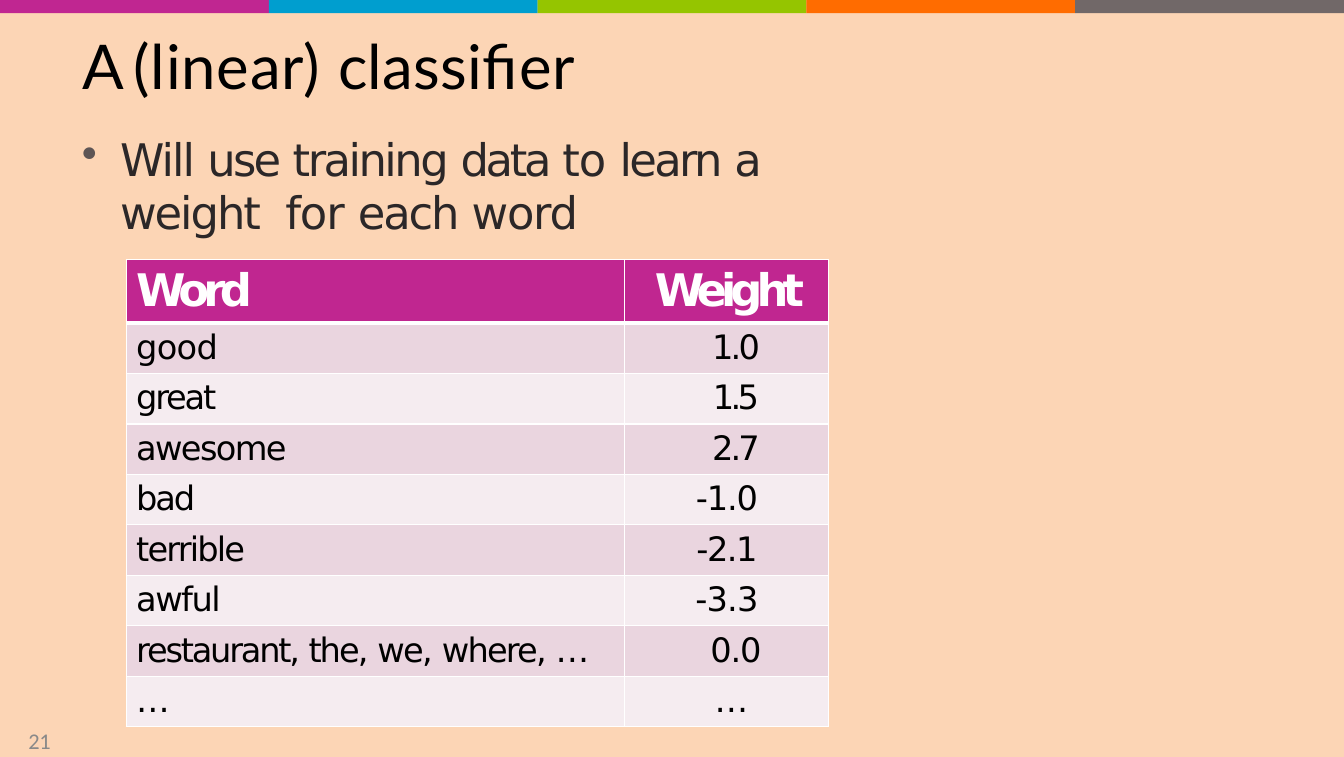
from lxml.etree import SubElement
from pptx import Presentation
from pptx.dml.color import RGBColor
from pptx.enum.shapes import MSO_SHAPE
from pptx.enum.text import PP_ALIGN as Align
from pptx.oxml.ns import qn
from pptx.util import Pt

SLIDE_WIDTH, SLIDE_HEIGHT = 1332, 750
BACKGROUND = "FCD5B5"
BAR_COLORS = ["C02691", "009ECF", "95C500", "FF6C00", "716868"]
BAR_HEIGHT = 13

TITLE = [("A ", -3.3), ("(linear) ", 0.6), ("classifier", 0.2)]
BULLET = [("Will ", -1.4), ("use ", -2), ("training ", -1.8), ("data ", -2.4),
          ("to ", -0.8), ("learn ", -1.9), ("a ", -3), ("weight  ", -1.5),
          ("for ", -0.8), ("each ", -1.6), ("word", -0.9)]
PAGE_NUMBER = [("21", -0.1)]

HEADER = ([("Word", -4.1)], [("Weight", -4.3)], 30, Align.LEFT)
WEIGHTS = [
    ([("good", -0.5)], [("1.0", -2)], 19, Align.CENTER),
    ([("great", -1.6)], [("1.5", -2.6)], 19, Align.CENTER),
    ([("awesome", -1.2)], [("2.7", -2.1)], 19, Align.CENTER),
    ([("bad", -1.5)], [("-1.0", -0.8)], 1, Align.CENTER),
    ([("terrible", -1.3)], [("-2.1", -1.1)], 1, Align.CENTER),
    ([("awful", -1.1)], [("-3.3", -0.6)], 1, Align.CENTER),
    ([("restaurant, ", -1.6), ("the, ", -1.4), ("we, ", -1.2),
      ("where, ", -1.3), ("…", -6.9)], [("0.0", -0.8)], 85, Align.LEFT),
    ([("…", 0)], [("…", 0)], 10, Align.CENTER),
]
WORD_INDENT = 10
TABLE_LEFT, TABLE_TOP = 125, 257
COLUMN_WIDTHS = [494, 202]
HEADER_HEIGHT, ROW_HEIGHT = 63, 50
HEADER_FILL, BAND_FILLS = "C02690", ["EAD5DF", "F5ECF0"]
TABLE_FONT = "DejaVu Sans"


def px(length):
    return round(length * 9144)


def color(value):
    return RGBColor.from_string(value)


def add_runs(paragraph, runs, font, size, text_color, bold=False):
    for text, spacing in runs:
        run = paragraph.add_run()
        run.text = text
        run.font.name = font
        run.font.size = Pt(size)
        run.font.bold = bold
        run.font.color.rgb = color(text_color)
        run.font._element.set("spc", str(round(spacing * 100)))


def add_text(slide, box, inset_left, inset_top, space_before, runs, *style):
    shape = slide.shapes.add_textbox(*map(px, box))
    frame = shape.text_frame
    frame.word_wrap = True
    frame.margin_left, frame.margin_top = px(inset_left), px(inset_top)
    frame.margin_right = frame.margin_bottom = 0
    paragraph = frame.paragraphs[0]
    paragraph.space_before = Pt(space_before)
    add_runs(paragraph, runs, *style)
    return paragraph


def add_bullet(paragraph, bullet_color, indent, hanging):
    properties = paragraph._p.get_or_add_pPr()
    properties.set("marL", str(px(indent)))
    properties.set("indent", str(px(-hanging)))
    SubElement(SubElement(properties, qn("a:buClr")), qn("a:srgbClr"), val=bullet_color)
    SubElement(properties, qn("a:buChar"), char="•")


def add_borders(cell, top, bottom):
    properties = cell._tc.get_or_add_tcPr()
    for side, width in (("L", 1), ("R", 1), ("T", top), ("B", bottom)):
        line = SubElement(properties, qn(f"a:ln{side}"), w=str(Pt(width)))
        SubElement(SubElement(line, qn("a:solidFill")), qn("a:srgbClr"), val="FFFFFF")


def fill_cell(cell, runs, indent, alignment, fill, borders, *style):
    add_borders(cell, *borders)
    cell.fill.solid()
    cell.fill.fore_color.rgb = color(fill)
    cell.margin_left, cell.margin_top = px(indent), px(5)
    cell.margin_right = cell.margin_bottom = 0
    paragraph = cell.text_frame.paragraphs[0]
    paragraph.alignment = alignment
    paragraph.space_before = Pt(3.5)
    add_runs(paragraph, runs, TABLE_FONT, *style)


def add_weight_table(slide):
    rows = [HEADER] + WEIGHTS
    height = HEADER_HEIGHT + ROW_HEIGHT * len(WEIGHTS)
    table = slide.shapes.add_table(
        len(rows), len(COLUMN_WIDTHS), px(TABLE_LEFT), px(TABLE_TOP),
        px(sum(COLUMN_WIDTHS)), px(height)).table
    table.first_row = table.horz_banding = False
    for column, width in zip(table.columns, COLUMN_WIDTHS):
        column.width = px(width)
    for index, (word, weight, weight_indent, alignment) in enumerate(rows):
        is_header = index == 0
        table.rows[index].height = px(HEADER_HEIGHT if is_header else ROW_HEIGHT)
        fill = HEADER_FILL if is_header else BAND_FILLS[(index - 1) % 2]
        borders = (3 if index == 1 else 1, 3 if is_header else 1)
        style = (32, "FFFFFF", True) if is_header else (24, "000000", False)
        fill_cell(table.cell(index, 0), word, WORD_INDENT, Align.LEFT, fill, borders, *style)
        fill_cell(table.cell(index, 1), weight, weight_indent, alignment, fill, borders, *style)


def add_color_bars(slide):
    width = SLIDE_WIDTH / len(BAR_COLORS)
    for index, bar_color in enumerate(BAR_COLORS):
        shape = slide.shapes.add_shape(
            MSO_SHAPE.RECTANGLE, px(index * width), 0, px(width), px(BAR_HEIGHT))
        shape.shadow.inherit = False
        shape.fill.solid()
        shape.fill.fore_color.rgb = color(bar_color)
        shape.line.fill.background()


def main():
    presentation = Presentation()
    presentation.slide_width, presentation.slide_height = px(SLIDE_WIDTH), px(SLIDE_HEIGHT)
    slide = presentation.slides.add_slide(presentation.slide_layouts[6])
    slide.background.fill.solid()
    slide.background.fill.fore_color.rgb = color(BACKGROUND)

    add_color_bars(slide)
    add_text(slide, (81, 27, 511, 76), 1, 1, 0.9, TITLE, "Lato", 44, "000000")
    add_text(slide, (24, 720, 31, 30), 4, 0, 0.2, PAGE_NUMBER, "Calibri", 16, "898989")
    paragraph = add_text(slide, (80, 127, 811, 109), 0, 4, 2.5, BULLET,
                         "DejaVu Sans", 32, "2B2728")
    paragraph.line_spacing = Pt(38)
    add_bullet(paragraph, "5D5555", 39, 38)
    add_weight_table(slide)
    presentation.save("out.pptx")


if __name__ == "__main__":
    main()
